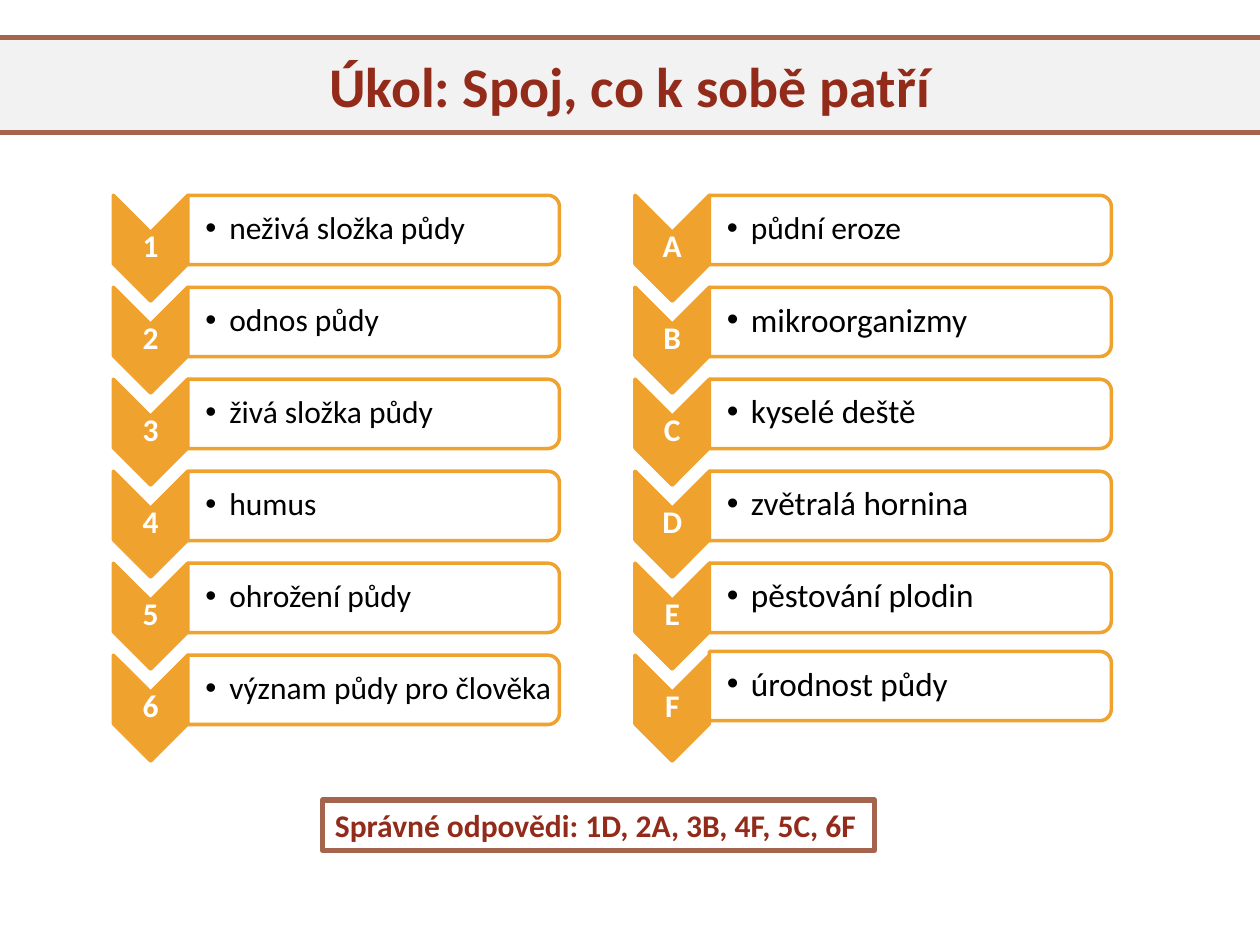
from lxml.etree import SubElement
from pptx import Presentation
from pptx.dml.color import RGBColor
from pptx.enum.shapes import MSO_SHAPE
from pptx.enum.text import MSO_ANCHOR, MSO_AUTO_SIZE, PP_ALIGN
from pptx.oxml.ns import qn
from pptx.util import Inches, Pt

ORANGE, BROWN, RED = "F0A22E", "A5644E", "922B1A"
ROW_PITCH, BAR_HEIGHT = 0.73, 0.55
CHEVRON_WIDTH, CHEVRON_HEIGHT = 0.59, 0.84


def color(hex_code):
    return RGBColor.from_string(hex_code)


def set_outline(shape, hex_code, width):
    shape.line.color.rgb = color(hex_code)
    shape.line.width = Pt(width)


def set_text(frame, text, size, hex_code, bold=False):
    frame.text = text
    font = frame.paragraphs[0].runs[0].font
    font.name, font.size, font.bold = "Calibri", Pt(size), bold
    font.color.rgb = color(hex_code)
    return frame.paragraphs[0]


def add_upright(parent, kind, left, top, width, height, fill):
    """Add a shape turned by 90 degrees that covers the given box."""
    center_x, center_y = left + width / 2, top + height / 2
    shape = parent.add_shape(kind, Inches(center_x - height / 2), Inches(center_y - width / 2),
                             Inches(height), Inches(width))
    shape.rotation = 90
    shape.shadow.inherit = False
    shape.fill.solid()
    shape.fill.fore_color.rgb = color(fill)
    set_outline(shape, ORANGE, 2)
    return shape


def add_label(parent, left, top, width, height, left_inset=0.01):
    frame = parent.add_textbox(Inches(left), Inches(top), Inches(width), Inches(height)).text_frame
    frame.word_wrap = True
    frame.vertical_anchor = MSO_ANCHOR.MIDDLE
    frame.margin_left = Inches(left_inset)
    frame.margin_right = frame.margin_top = frame.margin_bottom = Inches(0.01)
    return frame


def add_bullet(paragraph):
    paragraph.level = 1
    properties = paragraph._p.get_or_add_pPr()
    properties.set("marL", str(Inches(0.19)))
    properties.set("indent", str(-Inches(0.19)))
    SubElement(properties, qn("a:buFont"), typeface="Arial")
    SubElement(properties, qn("a:buChar"), char="•")


def add_row(parent, left, top, bar_top, bar_width, key, term, size):
    # Chevron with its number or letter
    add_upright(parent, MSO_SHAPE.CHEVRON, left, top, CHEVRON_WIDTH, CHEVRON_HEIGHT, ORANGE)
    key_frame = add_label(parent, left, top + 0.29, CHEVRON_WIDTH, 0.25)
    key_text = set_text(key_frame, key, 18, "FFFFFF", bold=True)
    key_text.alignment = PP_ALIGN.CENTER
    key_text.line_spacing = 0.9

    # Bar with the term
    bar_left = left + CHEVRON_WIDTH
    bar = add_upright(parent, MSO_SHAPE.ROUND_2_SAME_RECTANGLE, bar_left, bar_top,
                      bar_width, BAR_HEIGHT, "FFFFFF")
    SubElement(bar.fill._xPr.find(f".//{qn('a:srgbClr')}"), qn("a:alpha"), val="90000")
    term_frame = add_label(parent, bar_left, bar_top + 0.02, bar_width - 0.02, 0.5, 0.14)
    term_text = set_text(term_frame, term, size, "000000")
    add_bullet(term_text)
    term_text.line_spacing = 0.9


def add_column(slide, left, top, bar_width, rows, last_lift=0):
    column = slide.shapes.add_group_shape().shapes
    for index, (key, term, size) in enumerate(rows):
        row_top = top + index * ROW_PITCH
        lift = last_lift if index == len(rows) - 1 else 0
        add_row(column, left, row_top, row_top - lift, bar_width, key, term, size)


def add_title(slide, left, top, width, height):
    title = slide.shapes.title
    title.left, title.top = Inches(left), Inches(top)
    title.width, title.height = Inches(width), Inches(height)
    title.fill.solid()
    title.fill.fore_color.rgb = color("F2F2F2")
    set_outline(title, BROWN, 3)
    heading = set_text(title.text_frame, "Úkol: Spoj, co k sobě patří", 32, RED, bold=True)
    heading.alignment = PP_ALIGN.CENTER
    title.text_frame.vertical_anchor = MSO_ANCHOR.MIDDLE


def add_answers(slide, left, top, width, height):
    answers = slide.shapes.add_textbox(Inches(left), Inches(top), Inches(width), Inches(height))
    set_outline(answers, BROWN, 3)
    answers.text_frame.word_wrap = False
    answers.text_frame.auto_size = MSO_AUTO_SIZE.SHAPE_TO_FIT_TEXT
    set_text(answers.text_frame, "Správné odpovědi: 1D, 2A, 3B, 4F, 5C, 6F", 18, RED, bold=True)


def main():
    presentation = Presentation()
    presentation.slide_width, presentation.slide_height = Inches(10), Inches(7.5)
    slide = presentation.slides.add_slide(presentation.slide_layouts[5])

    numbered_terms = ["neživá složka půdy", "odnos půdy", "živá složka půdy",
                      "humus", "ohrožení půdy", "význam půdy pro člověka"]
    lettered_terms = ["půdní eroze", "mikroorganizmy", "kyselé deště",
                      "zvětralá hornina", "pěstování plodin", "úrodnost půdy"]

    add_title(slide, -0.12, 0.3, 10.24, 0.75)
    add_column(slide, 0.9, 1.55, 2.95,
               [(key, term, 18) for key, term in zip("123456", numbered_terms)])
    add_column(slide, 5.04, 1.55, 3.19,
               [(key, term, 18 if key == "A" else 19) for key, term in zip("ABCDEF", lettered_terms)],
               last_lift=0.03)
    add_answers(slide, 2.56, 6.35, 4.38, 0.4)
    presentation.save("out.pptx")


if __name__ == "__main__":
    main()
